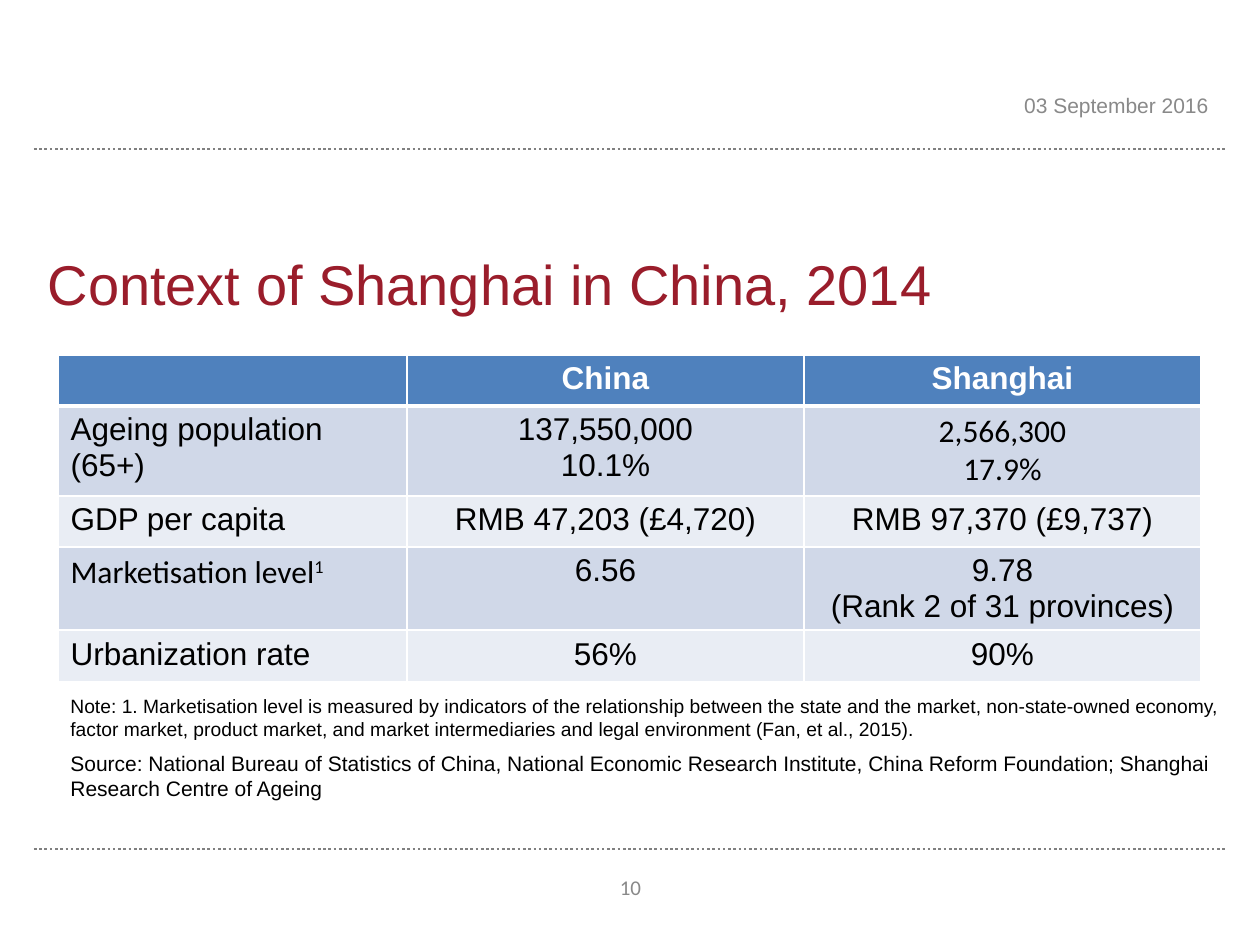
from dataclasses import dataclass

from lxml import etree
from pptx import Presentation
from pptx.dml.color import RGBColor
from pptx.enum.dml import MSO_LINE
from pptx.enum.shapes import MSO_CONNECTOR
from pptx.enum.text import MSO_ANCHOR, PP_ALIGN
from pptx.oxml.ns import qn
from pptx.util import Emu, Pt

DOTTED = MSO_LINE.ROUND_DOT
STRAIGHT = MSO_CONNECTOR.STRAIGHT
LEFT, CENTER, RIGHT = PP_ALIGN.LEFT, PP_ALIGN.CENTER, PP_ALIGN.RIGHT
TOP, MIDDLE, BOTTOM = MSO_ANCHOR.TOP, MSO_ANCHOR.MIDDLE, MSO_ANCHOR.BOTTOM
PX_PER_INCH = 126


@dataclass(frozen=True)
class Theme:
    sans: str = "Arial"
    alt: str = "Calibri"
    title: str = "9A1D2B"
    text: str = "000000"
    white: str = "FFFFFF"
    muted: str = "898989"
    rule: str = "808080"
    header: str = "4F81BD"
    bands: tuple = ("D0D8E8", "E9EDF4")
    title_size: int = 32
    table_size: int = 18
    body_size: int = 12
    note_size: int = 11


THEME = Theme()

COLUMNS = (349, 397, 397)
ROW_HEIGHTS = (51, 90, 51, 83, 52)
ROWS = (
    ("", "China", "Shanghai"),
    ("Ageing population (65+)", "137,550,000\n10.1%", "2,566,300\n17.9%"),
    ("GDP per capita", "RMB 47,203 (£4,720)", "RMB 97,370 (£9,737)"),
    ("Marketisation level", "6.56", "9.78\n(Rank 2 of 31 provinces)"),
    ("Urbanization rate", "56%", "90%"),
)
ALT_FONT_CELLS = {(1, 2), (3, 0)}
FOOTNOTE_CELL = (3, 0)

NOTE = (
    "Note: 1. Marketisation level is measured by indicators of the relationship "
    "between the state and the market, non-state-owned economy, factor market, "
    "product market, and market intermediaries and legal environment "
    "(Fan, et al., 2015)."
)
SOURCE = (
    "Source: National Bureau of Statistics of China, National Economic Research "
    "Institute, China Reform Foundation; Shanghai Research Centre of Ageing"
)


def px(n):
    return Emu(round(n * 914400 / PX_PER_INCH))


def rgb(color):
    return RGBColor.from_string(color)


def write(tf, text, size, color, font=THEME.sans, align=LEFT, bold=False):
    tf.text = text
    for p in tf.paragraphs:
        p.alignment = align
        p.font.name = font
        p.font.size = Pt(size)
        p.font.bold = bold
        p.font.color.rgb = rgb(color)


def add_title(s, box, text):
    sp = s.shapes.title
    sp.left, sp.top, sp.width, sp.height = map(px, box)
    write(sp.text_frame, text, THEME.title_size, THEME.title)
    sp.text_frame.vertical_anchor = BOTTOM


def add_label(s, box, text, size, color, font=THEME.sans, align=LEFT, anchor=TOP):
    tf = s.shapes.add_textbox(*map(px, box)).text_frame
    tf.word_wrap = True
    tf.vertical_anchor = anchor
    write(tf, text, size, color, font, align)


def add_rule(s, y):
    line = s.shapes.add_connector(STRAIGHT, px(34), px(y), px(1226), px(y))
    line.line.color.rgb = rgb(THEME.rule)
    line.line.width = Pt(1.5)
    line.line.dash_style = DOTTED
    etree.SubElement(line._element.spPr, qn("a:effectLst"))


def set_borders(cell, bottom):
    tc_pr = cell._tc.get_or_add_tcPr()
    widths = {"lnL": 1, "lnR": 1, "lnT": 1, "lnB": bottom}
    for i, (side, width) in enumerate(widths.items()):
        ln = etree.Element(qn(f"a:{side}"), w=str(Pt(width)))
        fill = etree.SubElement(ln, qn("a:solidFill"))
        etree.SubElement(fill, qn("a:srgbClr"), val=THEME.white)
        tc_pr.insert(i, ln)


def add_superscript(p, text):
    r = p.add_run()
    r.text = text
    r.font._element.set("baseline", "30000")


def add_indicator_table(s, left, top):
    frame = s.shapes.add_table(
        len(ROWS), len(COLUMNS), px(left), px(top),
        px(sum(COLUMNS)), px(sum(ROW_HEIGHTS)),
    )
    table = frame.table
    for column, width in zip(table.columns, COLUMNS):
        column.width = px(width)
    for i, (row, height) in enumerate(zip(ROWS, ROW_HEIGHTS)):
        table.rows[i].height = px(height)
        header = i == 0
        fill = THEME.header if header else THEME.bands[(i - 1) % 2]
        for j, text in enumerate(row):
            cell = table.cell(i, j)
            cell.fill.solid()
            cell.fill.fore_color.rgb = rgb(fill)
            set_borders(cell, 3 if header else 1)
            write(
                cell.text_frame, text, THEME.table_size,
                THEME.white if header else THEME.text,
                THEME.alt if (i, j) in ALT_FONT_CELLS else THEME.sans,
                CENTER if j else LEFT, header,
            )
    add_superscript(table.cell(*FOOTNOTE_CELL).text_frame.paragraphs[0], "1")


def main():
    prs = Presentation()
    prs.slide_width, prs.slide_height = px(1260), px(945)
    s = prs.slides.add_slide(prs.slide_layouts[5])
    for y in (149, 849):
        add_rule(s, y)
    add_title(s, (35, 165, 1191, 158), "Context of Shanghai in China, 2014")
    add_indicator_table(s, 58, 355)
    add_label(s, (581, 862, 99, 50), "10", THEME.body_size, THEME.muted,
              THEME.alt, CENTER, MIDDLE)
    add_label(s, (927, 86, 294, 50), "03 September 2016", THEME.body_size,
              THEME.muted, align=RIGHT)
    add_label(s, (58, 744, 1202, 63), SOURCE, THEME.body_size, THEME.text)
    add_label(s, (58, 688, 1187, 58), NOTE, THEME.note_size, THEME.text)
    prs.save("out.pptx")


if __name__ == "__main__":
    main()
